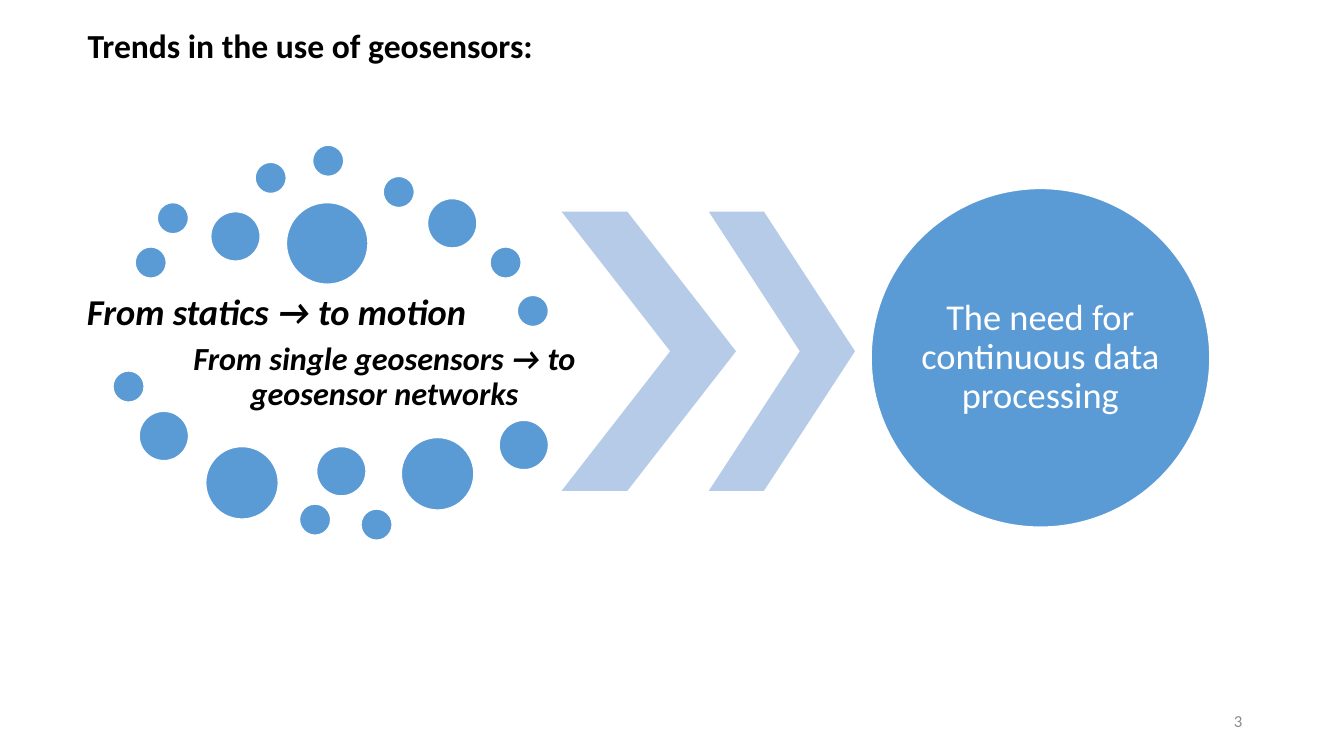
from pptx import Presentation
from pptx.dml.color import RGBColor
from pptx.enum.shapes import MSO_SHAPE as Shape
from pptx.enum.text import MSO_ANCHOR as Anchor, PP_ALIGN as Align
from pptx.util import Inches, Pt

COLORS = {"blue": "5B9BD5", "pale": "B5CBE7", "white": "FFFFFF",
          "black": "000000", "gray": "8C8C8C"}
FONT = "Calibri"

TITLE = "Trends in the use of geosensors:"
PAGE_NUMBER = "3"
NEED = "The need for continuous data processing"
# text, box (left, top, width, height), size, inset
TRENDS = [
    ("From statics → to motion", (0.77, 2.87, 3.95, 0.49), 26, 0.04),
    ("From single geosensors → to geosensor networks", (1.57, 3.35, 4.49, 0.79), 23, 0.03),
]
# diameter: left and top of each dot
DOTS = {
    0.31: [(1.34, 2.45), (1.56, 2.01), (2.53, 1.61), (3.1, 1.44), (3.8, 1.75),
           (4.86, 2.45), (5.13, 2.93), (1.12, 3.68), (2.97, 5), (3.58, 5.05)],
    0.49: [(2.09, 2.1), (4.24, 1.97), (1.38, 4.08), (3.14, 4.43), (4.95, 4.17)],
    0.72: [(2.04, 4.43), (3.98, 4.34)],
    0.81: [(2.84, 2.01)],
}
CHEVRON_TOP, CHEVRON_HEIGHT, CHEVRON_POINT = 2.1, 2.77, 0.623
CHEVRONS = [(5.57, 1.73), (7.03, 1.45)]  # left, width
NEED_CIRCLE = (8.64, 1.87, 3.36)  # left, top, diameter


def color(name):
    return RGBColor.from_string(COLORS[name])


def write(sp, text, size, ink="black", bold=False, italic=False, align=Align.CENTER,
          anchor=Anchor.MIDDLE, inset=None, spacing=None):
    tf = sp.text_frame
    tf.word_wrap = True
    tf.vertical_anchor = anchor
    if inset is not None:
        tf.margin_left = tf.margin_right = tf.margin_top = tf.margin_bottom = Inches(inset)
    p = tf.paragraphs[0]
    p.text = text
    p.alignment = align
    p.line_spacing = spacing
    font = p.runs[0].font
    font.name, font.size, font.bold, font.italic = FONT, Pt(size), bold, italic
    font.color.rgb = color(ink)


def add_text(slide, box, text, size, **style):
    write(slide.shapes.add_textbox(*map(Inches, box)), text, size, **style)


def add_filled(slide, kind, box, fill, line=None):
    sp = slide.shapes.add_shape(kind, *map(Inches, box))
    sp.shadow.inherit = False
    sp.fill.solid()
    sp.fill.fore_color.rgb = color(fill)
    if line:
        sp.line.color.rgb = color(line)
        sp.line.width = Pt(1)
    else:
        sp.line.fill.background()
    return sp


def add_circle(slide, left, top, diameter):
    return add_filled(slide, Shape.OVAL, (left, top, diameter, diameter), "blue", "white")


def main():
    prs = Presentation()
    prs.slide_width, prs.slide_height = Inches(13.33), Inches(7.5)
    slide = prs.slides.add_slide(prs.slide_layouts[6])

    add_text(slide, (0.77, 0.2, 11.63, 0.5), TITLE, 24, bold=True,
             align=Align.LEFT, anchor=Anchor.TOP)
    for text, box, size, inset in TRENDS:
        add_text(slide, box, text, size, bold=True, italic=True, inset=inset, spacing=0.9)
    for diameter, places in DOTS.items():
        for left, top in places:
            add_circle(slide, left, top, diameter)
    for left, width in CHEVRONS:
        sp = add_filled(slide, Shape.CHEVRON, (left, CHEVRON_TOP, width, CHEVRON_HEIGHT), "pale")
        sp.adjustments[0] = CHEVRON_POINT
    write(add_circle(slide, *NEED_CIRCLE), NEED, 26, ink="white", inset=0, spacing=0.9)
    add_text(slide, (9.42, 6.95, 3, 0.4), PAGE_NUMBER, 12, ink="gray", align=Align.RIGHT)

    prs.save("out.pptx")


if __name__ == "__main__":
    main()
